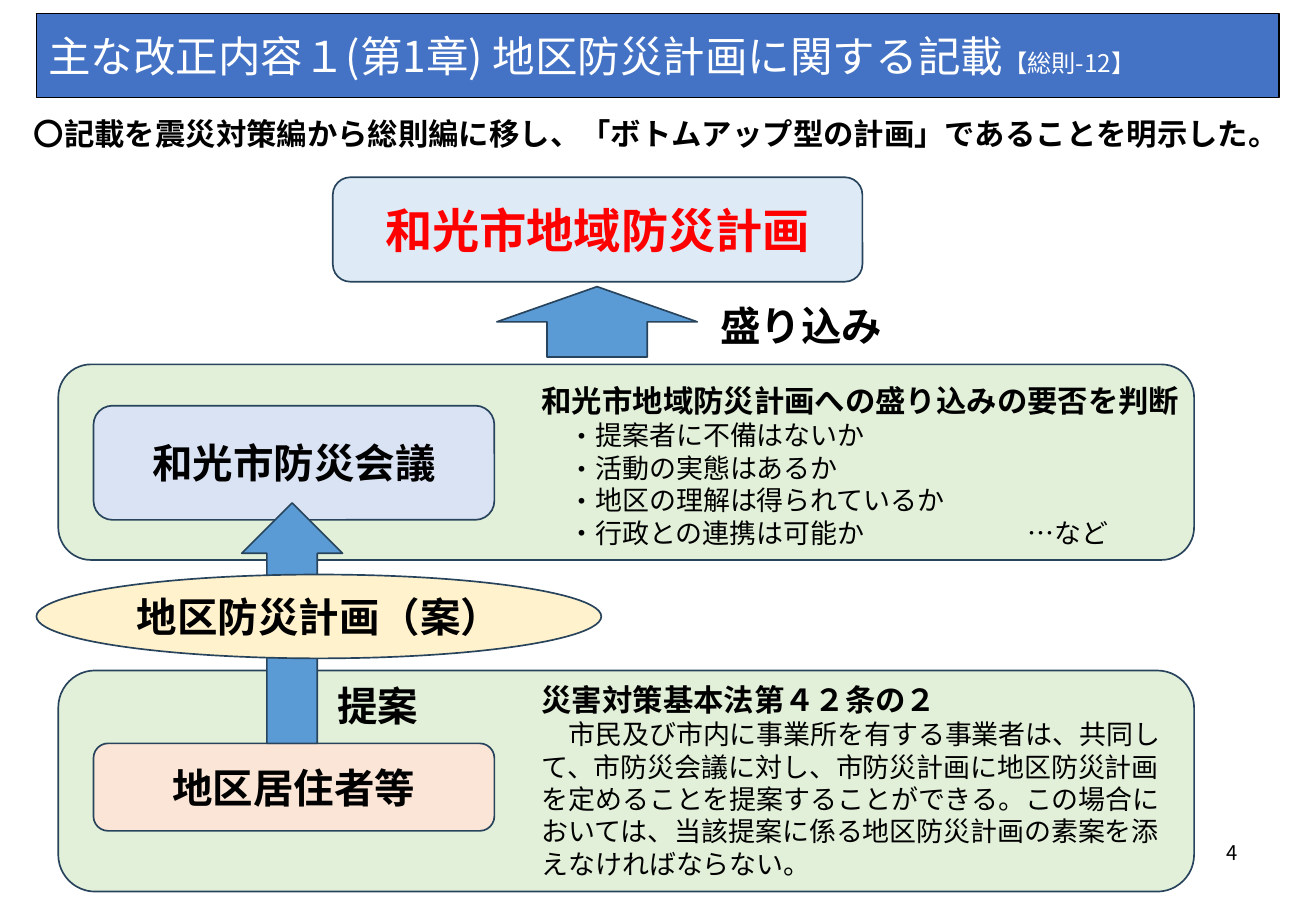
from dataclasses import dataclass

from lxml import etree
from pptx import Presentation
from pptx.dml.color import RGBColor
from pptx.enum.shapes import MSO_SHAPE
from pptx.enum.text import MSO_ANCHOR, PP_ALIGN
from pptx.oxml.ns import qn
from pptx.util import Pt

RECTANGLE, ROUNDED = MSO_SHAPE.RECTANGLE, MSO_SHAPE.ROUNDED_RECTANGLE
OVAL, UP_ARROW = MSO_SHAPE.OVAL, MSO_SHAPE.UP_ARROW
LEFT, CENTER, RIGHT = PP_ALIGN.LEFT, PP_ALIGN.CENTER, PP_ALIGN.RIGHT
TOP, MIDDLE = MSO_ANCHOR.TOP, MSO_ANCHOR.MIDDLE


@dataclass(frozen=True)
class Theme:
    """Fonts, type sizes and colours of the slide."""
    font: str = "Noto Sans CJK JP"
    plan_size: float = 28
    title_size: float = 25.2
    label_size: float = 24
    heading_size: float = 18
    body_size: float = 16
    reference_size: float = 14.4
    number_size: float = 12
    black: str = "000000"
    white: str = "FFFFFF"
    red: str = "FF0000"
    outline: str = "28445D"
    title_fill: str = "4472C4"
    arrow_fill: str = "5B9BD5"
    stage_fill: str = "E2F0D9"
    plan_fill: str = "DEEBF7"
    council_fill: str = "DAE3F3"
    residents_fill: str = "FBE5D6"
    proposal_fill: str = "FFF2CC"


THEME = Theme()


@dataclass(frozen=True)
class Box:
    """A rectangle in points."""
    left: float
    top: float
    width: float
    height: float

    def inside(self, left, top, width, height):
        """Return a box offset from this one's top left corner."""
        return Box(self.left + left, self.top + top, width, height)

    def lengths(self):
        """Return left, top, width and height as lengths."""
        return [Pt(v) for v in (self.left, self.top, self.width, self.height)]


def style_paragraph(para, size, bold=False, color=THEME.black, align=LEFT):
    """Set font and alignment of a paragraph."""
    para.alignment = align
    font = para.font
    font.name, font.size, font.bold = THEME.font, Pt(size), bold
    font.color.rgb = RGBColor.from_string(color)
    defaults = para._p.get_or_add_pPr().find(qn("a:defRPr"))
    etree.SubElement(defaults, qn("a:ea"), typeface=THEME.font)


def add_bullet(para, tab):
    """Give a paragraph a hanging middle-dot bullet and a tab stop."""
    properties = para._p.get_or_add_pPr()
    properties.set("marL", str(Pt(2 * THEME.body_size)))
    properties.set("indent", str(-Pt(THEME.body_size)))
    bullet_font = etree.Element(qn("a:buFont"), typeface=THEME.font)
    bullet = etree.Element(qn("a:buChar"), char="・")
    tabs = etree.Element(qn("a:tabLst"))
    etree.SubElement(tabs, qn("a:tab"), pos=str(Pt(tab)), algn="l")
    for index, element in enumerate((bullet_font, bullet, tabs)):
        properties.insert(index, element)


def add_figure(page, kind, box, fill, line=THEME.outline, weight=1):
    """Add a filled, outlined preset shape."""
    shape = page.shapes.add_shape(kind, *box.lengths())
    shape.shadow.inherit = False
    shape.fill.solid()
    shape.fill.fore_color.rgb = RGBColor.from_string(fill)
    shape.line.color.rgb = RGBColor.from_string(line)
    shape.line.width = Pt(weight)
    return shape


def add_node(page, kind, box, fill, text, size=THEME.label_size,
             color=THEME.black):
    """Add a shape with one centred bold label."""
    frame = add_figure(page, kind, box, fill).text_frame
    frame.word_wrap = True
    frame.vertical_anchor = MIDDLE
    frame.text = text
    style_paragraph(frame.paragraphs[0], size, True, color, CENTER)


def add_text(page, box, text, size, bold=True, align=LEFT, anchor=TOP):
    """Add a wrapping text box and return its frame."""
    frame = page.shapes.add_textbox(*box.lengths()).text_frame
    frame.word_wrap = True
    frame.vertical_anchor = anchor
    frame.text = text
    style_paragraph(frame.paragraphs[0], size, bold, align=align)
    return frame


def draw_title(page, box):
    """Draw the title bar with its chapter reference."""
    frame = add_figure(page, RECTANGLE, box, THEME.title_fill,
                       THEME.black, 0.75).text_frame
    frame.word_wrap = True
    frame.vertical_anchor = MIDDLE
    para = frame.paragraphs[0]
    para.add_run().text = "主な改正内容１(第1章) 地区防災計画に関する記載"
    span = para.add_run()
    span.text = "【総則-12】"
    span.font.size = Pt(THEME.reference_size)
    style_paragraph(para, THEME.title_size, color=THEME.white)


def draw_plan(page, box):
    """Draw the city plan and the arrow leading into it."""
    add_node(page, ROUNDED, box.inside(0, 0, box.width, 61.92),
             THEME.plan_fill, "和光市地域防災計画", THEME.plan_size, THEME.red)
    add_figure(page, UP_ARROW, box.inside(97.2, 64.8, 118.8, 41.76),
               THEME.arrow_fill)
    add_text(page, box.inside(203.76, 69.84, 147.6, 36), "盛り込み",
             THEME.label_size, align=CENTER)


def draw_stage(page, box, node_top, node_height, fill, label, text_top, heading):
    """Draw a stage panel with its actor and return the explanation frame."""
    add_figure(page, ROUNDED, box, THEME.stage_fill)
    add_node(page, ROUNDED, box.inside(20.88, node_top, 237.6, node_height),
             fill, label)
    explanation = box.inside(279.36, text_top, 395.28,
                             box.height - 2 * text_top)
    return add_text(page, explanation, heading, THEME.heading_size)


def draw_council(page, box):
    """Draw the council stage with its review points."""
    frame = draw_stage(page, box, 24.48, 67.68, THEME.council_fill,
                       "和光市防災会議", 7.2,
                       "和光市地域防災計画への盛り込みの要否を判断")
    for point in ("提案者に不備はないか", "活動の実態はあるか",
                  "地区の理解は得られているか",
                  "行政との連携は可能か\t…など"):
        para = frame.add_paragraph()
        para.text = point
        style_paragraph(para, THEME.body_size)
        add_bullet(para, 18 * THEME.body_size)


def draw_residents(page, box):
    """Draw the residents stage with the legal basis."""
    frame = draw_stage(page, box, 43.2, 51.84, THEME.residents_fill,
                       "地区居住者等", 2.88, "災害対策基本法第４２条の２")
    para = frame.add_paragraph()
    para.text = ("市民及び市内に事業所を有する事業者は、共同して、市防災会議に対し、"
                 "市防災計画に地区防災計画を定めることを提案することができる。"
                 "この場合においては、当該提案に係る地区防災計画の素案を"
                 "添えなければならない。")
    style_paragraph(para, THEME.body_size)
    para._p.get_or_add_pPr().set("indent", str(Pt(THEME.body_size)))


def draw_proposal(page, box):
    """Draw the draft plan on the arrow from residents to council."""
    add_figure(page, UP_ARROW, box.inside(121.68, 0, 59.76, box.height),
               THEME.arrow_fill)
    add_node(page, OVAL, box.inside(0, 42.48, box.width, 49.68),
             THEME.proposal_fill, "地区防災計画（案）")
    add_text(page, box.inside(157.68, 102.24, 89.28, 36), "提案",
             THEME.label_size, align=CENTER)


def main():
    """Build the slide and save it."""
    deck = Presentation()
    deck.slide_width, deck.slide_height = Pt(780), Pt(540)
    page = deck.slides.add_slide(deck.slide_layouts[6])
    draw_title(page, Box(21.6, 7.92, 736.56, 49.68))
    add_text(page, Box(12.96, 64.8, 754.56, 28.8),
             "〇記載を震災対策編から総則編に移し、「ボトムアップ型の計画」であることを明示した。",
             THEME.heading_size)
    draw_plan(page, Box(197.28, 105.12, 313.92, 106.56))
    draw_council(page, Box(34.56, 216, 673.2, 115.92))
    draw_residents(page, Box(34.56, 397.44, 673.2, 131.04))
    draw_proposal(page, Box(21.6, 298.08, 334.8, 142.56))
    add_text(page, Box(577.44, 491.04, 163.44, 28.8), "4",
             THEME.number_size, False, RIGHT, MIDDLE)
    deck.save("out.pptx")


if __name__ == "__main__":
    main()
